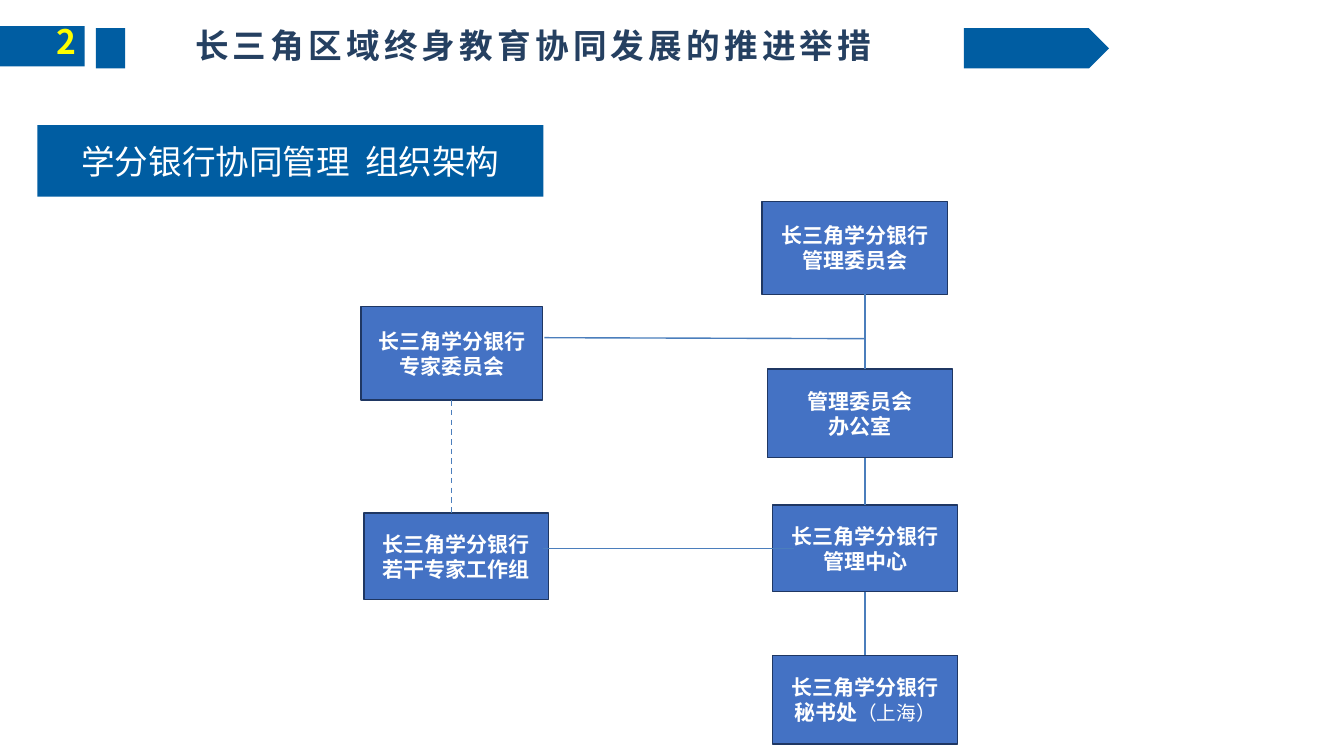
import pptx
import pptx.util
import pptx.dml.color
import pptx.enum.dml
import pptx.enum.shapes
import pptx.enum.text
import pptx.oxml
import pptx.oxml.ns

Inches = pptx.util.Inches
Shape = pptx.enum.shapes.MSO_SHAPE
Align = pptx.enum.text.PP_ALIGN
Anchor = pptx.enum.text.MSO_ANCHOR

COLORS = {
    "band": "005DA2",
    "unit": "4472C4",
    "unit_edge": "1F3763",
    "link": "4B7EBC",
    "title": "254061",
    "number": "FFFF00",
    "white": "FFFFFF",
}
BOLD_FONT = "Noto Sans CJK SC"
PLAIN_FONT = "Noto Sans CJK JP"
SPINE_X = 8.58
TOP, BOTTOM = 0, 2

UNITS = {
    "committee": ((7.56, 2, 1.84, 0.92), ["长三角学分银行管理委员会"]),
    "center": ((7.66, 5.01, 1.84, 0.86), ["长三角学分银行管理中心"]),
    "office": ((7.61, 3.66, 1.84, 0.88), ["管理委员会", "办公室"]),
    "secretariat": ((7.66, 6.5, 1.84, 0.88), ["长三角学分银行", "秘书处"]),
    "experts": ((3.58, 3.04, 1.8, 0.93), ["长三角学分银行专家委员会"]),
    "workgroup": ((3.61, 5.09, 1.83, 0.86), ["长三角学分银行若干专家工作组"]),
}


def rgb(name):
    return pptx.dml.color.RGBColor.from_string(COLORS[name])


def format_span(span, size, color, bold=True, font=BOLD_FONT):
    span.font.size = pptx.util.Pt(size)
    span.font.bold = bold
    span.font.name = font
    span.font.color.rgb = rgb(color)
    east_asian = pptx.oxml.parse_xml(
        f'<a:ea {pptx.oxml.ns.nsdecls("a")} typeface="{font}"/>')
    span.font._element.find(pptx.oxml.ns.qn("a:latin")).addnext(east_asian)


def write_text(box, lines, size, color, bold=True, font=BOLD_FONT,
               align=Align.CENTER, anchor=Anchor.MIDDLE):
    frame = box.text_frame
    frame.text = "\n".join(lines)
    frame.word_wrap = True
    frame.vertical_anchor = anchor
    for paragraph in frame.paragraphs:
        paragraph.alignment = align
        for span in paragraph.runs:
            format_span(span, size, color, bold, font)


def add_block(page, kind, place, fill, edge=None):
    block = page.shapes.add_shape(kind, *map(Inches, place))
    block.shadow.inherit = False
    block.fill.solid()
    block.fill.fore_color.rgb = rgb(fill)
    if edge:
        block.line.color.rgb = rgb(edge)
        block.line.width = pptx.util.Pt(1)
    else:
        block.line.fill.background()
    return block


def add_unit(page, place, lines):
    unit = add_block(page, Shape.RECTANGLE, place, "unit", "unit_edge")
    write_text(unit, lines, 15, "white")
    return unit


def add_link(page, start, end, dashed=False):
    link = page.shapes.add_connector(
        pptx.enum.shapes.MSO_CONNECTOR.STRAIGHT, *map(Inches, start + end))
    link.line.color.rgb = rgb("link")
    link.line.width = pptx.util.Pt(1)
    if dashed:
        link.line.dash_style = pptx.enum.dml.MSO_LINE.DASH
    link._element.spPr.append(pptx.oxml.parse_xml(
        f'<a:effectLst {pptx.oxml.ns.nsdecls("a")}/>'))
    return link


def add_title(page, text):
    title = page.shapes.title
    title.left, title.top, title.width, title.height = map(
        Inches, (1.17, 0.2, 8.24, 0.98))
    write_text(title, [text], 24, "title", anchor=Anchor.TOP)
    span = title.text_frame.paragraphs[0].runs[0]
    span.font._element.set("spc", "300")


def add_header(page):
    add_title(page, "长三角区域终身教育协同发展的推进举措")
    add_block(page, Shape.PENTAGON, (9.56, 0.28, 1.44, 0.4), "band")
    add_block(page, Shape.RECTANGLE, (0, 0.26, 0.84, 0.4), "band")
    add_block(page, Shape.RECTANGLE, (0.95, 0.28, 0.29, 0.4), "band")
    number = page.shapes.add_textbox(*map(Inches, (0.17, 0.16, 0.7, 0.58)))
    write_text(number, ["2"], 24, "number", align=Align.LEFT, anchor=Anchor.TOP)
    number.text_frame.margin_left = Inches(0.39)
    number.text_frame.margin_right = 0
    banner = add_block(page, Shape.RECTANGLE, (0.37, 1.24, 5.02, 0.71), "band")
    write_text(banner, ["学分银行协同管理  组织架构"], 24, "white", False, PLAIN_FONT)


def add_organisation(page):
    units = {name: add_unit(page, place, lines)
             for name, (place, lines) in UNITS.items()}
    city = units["secretariat"].text_frame.paragraphs[1].add_run()
    city.text = "（上海）"
    format_span(city, 14, "white", False)

    add_link(page, (SPINE_X, 3.36), (5.4, 3.35))
    add_link(page, (7.88, 5.44), (5.39, 5.44))
    add_link(page, (SPINE_X, 2.92), (SPINE_X, 3.66))
    to_center = add_link(page, (SPINE_X, 4.54), (SPINE_X, 5.01))
    to_center.end_connect(units["center"], TOP)
    to_secretariat = add_link(page, (SPINE_X, 5.87), (SPINE_X, 6.5))
    to_secretariat.begin_connect(units["center"], BOTTOM)
    to_secretariat.end_connect(units["secretariat"], TOP)
    to_workgroup = add_link(page, (4.48, 3.97), (4.48, 5.09), dashed=True)
    to_workgroup.begin_connect(units["experts"], BOTTOM)


def main():
    deck = pptx.Presentation()
    deck.slide_width, deck.slide_height = Inches(13.33), Inches(7.5)
    page = deck.slides.add_slide(deck.slide_layouts[5])
    add_header(page)
    add_organisation(page)
    deck.save("out.pptx")


if __name__ == "__main__":
    main()
